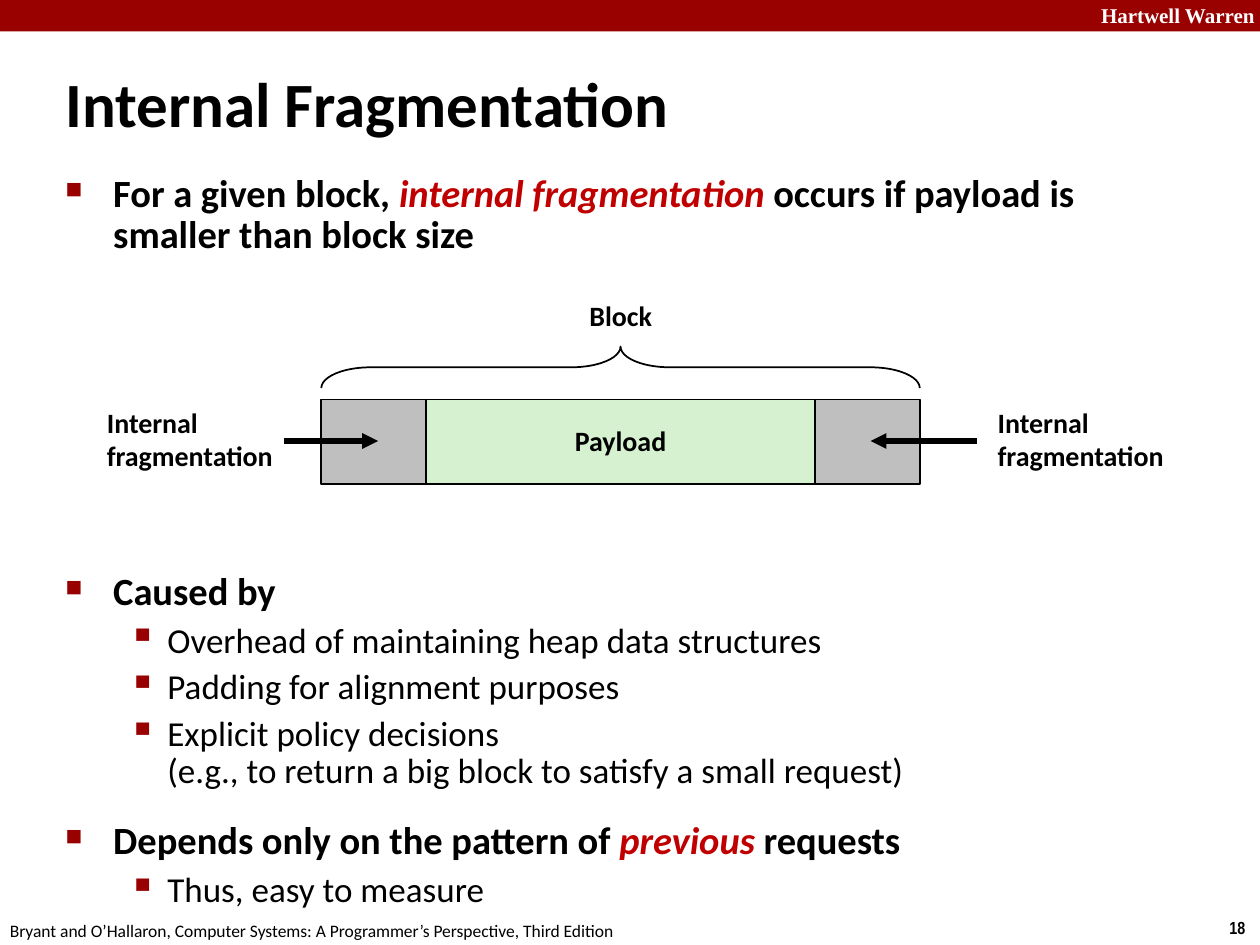
import pptx
import pptx.util
import pptx.dml.color
import pptx.enum.shapes
import pptx.enum.text
import pptx.oxml.ns
import lxml.etree

Inches = pptx.util.Inches
Pt = pptx.util.Pt
RGBColor = pptx.dml.color.RGBColor
Shape = pptx.enum.shapes.MSO_SHAPE
Align = pptx.enum.text.PP_ALIGN
Anchor = pptx.enum.text.MSO_ANCHOR
qn = pptx.oxml.ns.qn

BLACK = RGBColor(0x00, 0x00, 0x00)
WHITE = RGBColor(0xFF, 0xFF, 0xFF)
CRIMSON = RGBColor(0x99, 0x00, 0x00)
EMPHASIS = RGBColor(0xC0, 0x00, 0x00)
GREEN = RGBColor(0xD5, 0xF1, 0xCF)
GRAY = RGBColor(0xBF, 0xBF, 0xBF)

# (level, space before in points, runs); a run is (text, emphasized)
DIAGRAM_GAP = 181
BODY = [
    (0, 5.6, [("For a given block, ", False), ("internal fragmentation ", True),
              ("occurs if payload is smaller than block size", False)]),
    (0, DIAGRAM_GAP, [("Caused by", False)]),
    (1, 5.6, [("Overhead of maintaining heap data structures", False)]),
    (1, 5.6, [("Padding for alignment purposes", False)]),
    (1, 5.6, [("Explicit policy decisions \v"
               "(e.g., to return a big block to satisfy a small request)", False)]),
    (0, 18, [("Depends only on the pattern of ", False), ("previous", True),
             (" requests", False)]),
    (1, 5.6, [("Thus, easy to measure", False)]),
]
# size, bold, left margin, hanging indent, bullet, bullet percent
LEVELS = [
    (22, True, 0.38, 0.38, "■", 60),
    (20, False, 0.81, 0.31, "▪", 110),
]
# text, (left, top, width, height), size, bold, font, colour
HEADER = ("Hartwell Warren", (8.64, -0.03, 1.43, 0.3), 12, True, "Times New Roman", WHITE)
PAGE_NUMBER = ("18", (9.66, 7.23, 0.34, 0.27), 10, True, "Arial Narrow", BLACK)
FOOTER = ("Bryant and O’Hallaron, Computer Systems: A Programmer’s Perspective, Third Edition",
          (-0.02, 7.25, 5.08, 0.27), 10, False, "Calibri", BLACK)
TITLE = ("Internal Fragmentation", (0.42, 0.5, 7.36, 0.63), 36, True, "Calibri", BLACK)

DIAGRAM_LABELS = [
    ("Block", (4.58, 2.33, 0.7, 0.37)),
    ("Internal\nfragmentation", (0.75, 3.18, 1.53, 0.63)),
    ("Internal\nfragmentation", (7.82, 3.18, 1.53, 0.63)),
]
BLOCK_LEFT, BLOCK_TOP, BLOCK_HEIGHT = 2.55, 3.17, 0.67
BLOCK_PARTS = [("", 0.83, GRAY), ("Payload", 3.09, GREEN), ("", 0.83, GRAY)]
BRACE_TOP, BRACE_DEPTH = 2.75, 0.33
ARROW_Y = 3.5
ARROWS = [(2.25, 3), (7.75, 6.91)]


def set_font(paragraph, size, bold, name="Calibri", color=BLACK):
    font = paragraph.font
    font.size, font.bold, font.name = Pt(size), bold, name
    font.color.rgb = color


def add_label(page, text, place, size, bold, name, color, spacing=None):
    box = page.shapes.add_textbox(*map(Inches, place))
    box.text_frame.word_wrap = False
    box.text_frame.text = text
    for paragraph in box.text_frame.paragraphs:
        paragraph.line_spacing = spacing
        set_font(paragraph, size, bold, name, color)
    return box


def add_outlined(page, kind, place, fill=None, line=BLACK):
    shape = page.shapes.add_shape(kind, *map(Inches, place))
    shape.shadow.inherit = False
    if fill is None:
        shape.fill.background()
    else:
        shape.fill.solid()
        shape.fill.fore_color.rgb = fill
    if line is None:
        shape.line.fill.background()
    else:
        shape.line.color.rgb = line
        shape.line.width = Pt(1)
    return shape


def set_bullet(paragraph, margin, hanging, character, percent):
    properties = paragraph._p.get_or_add_pPr()
    properties.set("marL", str(Inches(margin)))
    properties.set("indent", str(-Inches(hanging)))
    color = lxml.etree.SubElement(properties, qn("a:buClr"))
    lxml.etree.SubElement(color, qn("a:srgbClr")).set("val", str(CRIMSON))
    lxml.etree.SubElement(properties, qn("a:buSzPct")).set("val", str(percent * 1000))
    lxml.etree.SubElement(properties, qn("a:buChar")).set("char", character)


def add_body(page):
    box = page.shapes.add_textbox(Inches(0.42), Inches(1.34), Inches(9.09), Inches(5.91))
    frame = box.text_frame
    frame.word_wrap = True
    for index, (level, before, spans) in enumerate(BODY):
        paragraph = frame.add_paragraph() if index else frame.paragraphs[0]
        size, bold, *bullet = LEVELS[level]
        paragraph.level = level
        paragraph.line_spacing = 0.88
        paragraph.space_before = Pt(before)
        set_bullet(paragraph, *bullet)
        set_font(paragraph, size, bold)
        for text, emphasized in spans:
            # A vertical tab marks a line break inside the paragraph
            for number, piece in enumerate(text.split("\v")):
                if number:
                    paragraph.add_line_break()
                span = paragraph.add_run()
                span.text = piece
                if emphasized:
                    span.font.italic = True
                    span.font.color.rgb = EMPHASIS


def add_block(page):
    left = BLOCK_LEFT
    for text, width, fill in BLOCK_PARTS:
        part = add_outlined(page, Shape.RECTANGLE, (left, BLOCK_TOP, width, BLOCK_HEIGHT), fill)
        if text:
            part.text_frame.text = text
            part.text_frame.word_wrap = False
            part.text_frame.vertical_anchor = Anchor.MIDDLE
            paragraph = part.text_frame.paragraphs[0]
            paragraph.alignment = Align.CENTER
            paragraph.line_spacing = 0.98
            set_font(paragraph, 16, True)
        left += width

    # The brace is drawn upright around its centre, then turned to span the block
    span = left - BLOCK_LEFT
    center_x, center_y = BLOCK_LEFT + span / 2, BRACE_TOP + BRACE_DEPTH / 2
    brace = add_outlined(page, Shape.RIGHT_BRACE, (center_x - BRACE_DEPTH / 2,
                                                   center_y - span / 2, BRACE_DEPTH, span))
    brace.rotation = 270
    brace.adjustments[0] = 1.19
    brace.adjustments[1] = 0.5


def add_arrow(page, start, end):
    arrow = page.shapes.add_connector(pptx.enum.shapes.MSO_CONNECTOR.STRAIGHT, Inches(start),
                                      Inches(ARROW_Y), Inches(end), Inches(ARROW_Y))
    arrow.line.color.rgb = BLACK
    arrow.line.width = Pt(3)
    lxml.etree.SubElement(arrow.line._get_or_add_ln(), qn("a:tailEnd")).set("type", "triangle")
    lxml.etree.SubElement(arrow._element.spPr, qn("a:effectLst"))


def main():
    deck = pptx.Presentation()
    deck.slide_width, deck.slide_height = Inches(10), Inches(7.5)
    page = deck.slides.add_slide(deck.slide_layouts[6])

    add_outlined(page, Shape.RECTANGLE, (0, 0, 10, 0.25), CRIMSON, None)
    for label in (HEADER, PAGE_NUMBER, FOOTER):
        add_label(page, *label)
    title = add_label(page, *TITLE)
    title.text_frame.word_wrap = True
    title.text_frame.vertical_anchor = Anchor.MIDDLE

    add_body(page)
    add_block(page)
    for text, place in DIAGRAM_LABELS:
        add_label(page, text, place, 16, True, "Calibri", BLACK, 0.98)
    for start, end in ARROWS:
        add_arrow(page, start, end)
    deck.save("out.pptx")


if __name__ == "__main__":
    main()
